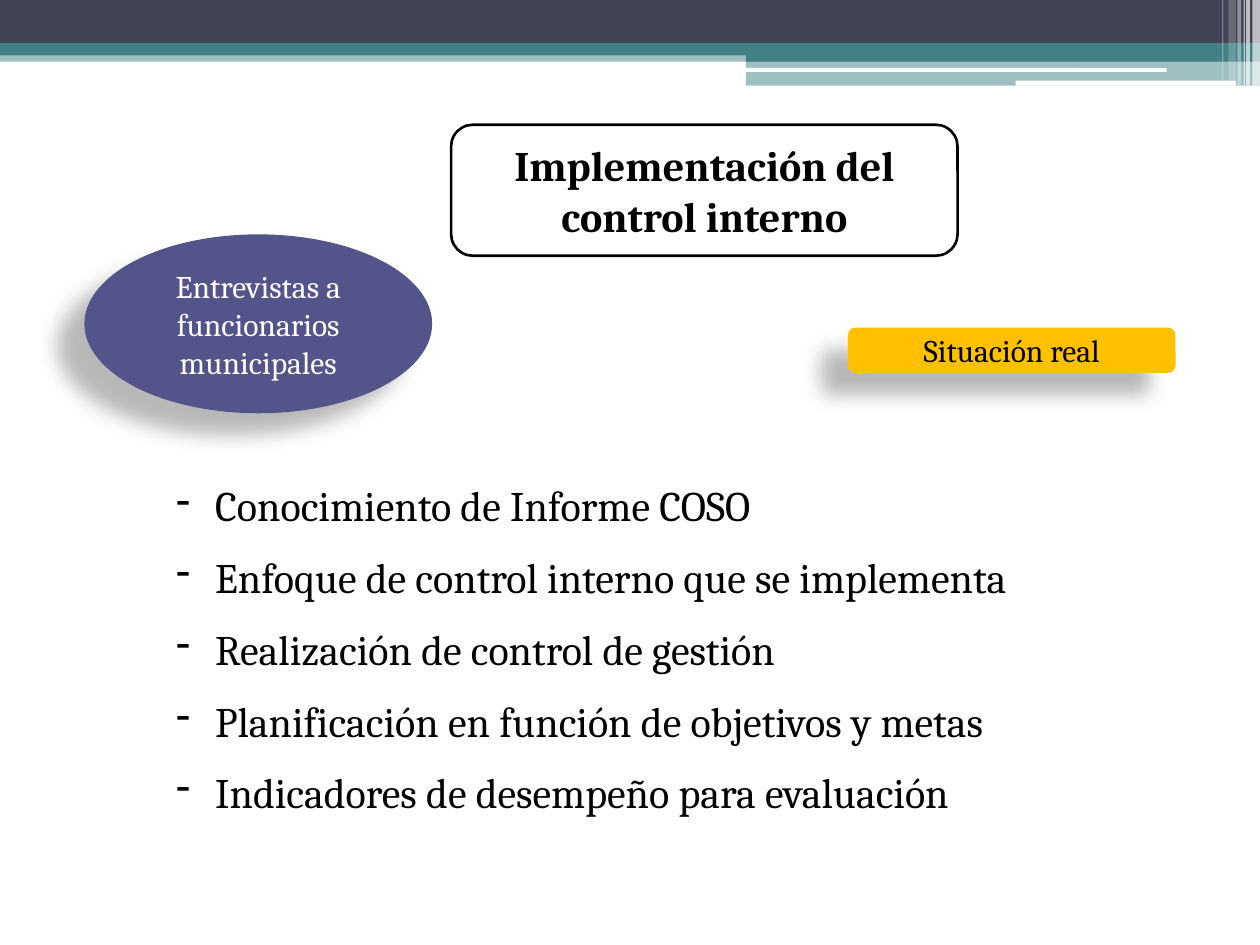
from dataclasses import dataclass
from typing import Optional

from lxml.etree import SubElement
from pptx import Presentation
from pptx.dml.color import RGBColor
from pptx.enum.shapes import MSO_SHAPE as Preset
from pptx.enum.text import MSO_ANCHOR as Anchor, PP_ALIGN as Align
from pptx.oxml.ns import qn
from pptx.util import Inches, Pt

FONT = "Cambria"
COLORS = {
    "navy": "424456",
    "teal": "438086",
    "white": "FFFFFF",
    "black": "000000",
    "purple": "53548A",
    "amber": "FFC000",
}


@dataclass
class Band:
    left: float
    top: float
    width: float
    height: float
    color: str
    opacity: int = 100
    preset: Preset = Preset.RECTANGLE


@dataclass
class Label:
    text: str
    preset: Preset
    left: float
    top: float
    width: float
    height: float
    fill: str
    color: str
    size: int
    bold: bool = False
    outline: Optional[str] = None
    shadow: bool = False


BANDS = [
    Band(0, 0.4, 10, 0.09, "teal", 50),
    Band(0, 0, 10, 0.34, "navy"),
    Band(0, 0.34, 10, 0.1, "teal"),
    Band(5.92, 0.39, 4.08, 0.1, "teal"),
    Band(5.92, 0.48, 4.08, 0.2, "teal", 50),
    Band(5.91, 0.54, 3.35, 0.03, "white", preset=Preset.ROUNDED_RECTANGLE),
    Band(8.06, 0.64, 1.75, 0.04, "white", preset=Preset.ROUNDED_RECTANGLE),
    Band(9.94, 0, 0.06, 0.68, "white", 65),
    Band(9.89, 0, 0.03, 0.68, "white", 65),
    Band(9.87, 0, 0.01, 0.68, "white", 60),
    Band(9.82, 0, 0.03, 0.68, "white", 40),
    Band(9.75, 0, 0.06, 0.64, "white", 20),
    Band(9.7, 0, 0.01, 0.64, "white", 30),
]

LABELS = [
    Label("Implementación del control interno", Preset.ROUNDED_RECTANGLE,
          3.58, 0.99, 4.02, 1.04, "white", "black", 24, bold=True, outline="black"),
    Label("Entrevistas a funcionarios municipales", Preset.OVAL,
          0.67, 1.86, 2.76, 1.42, "purple", "white", 18, shadow=True),
    Label("Situación real", Preset.ROUNDED_RECTANGLE,
          6.73, 2.6, 2.6, 0.36, "amber", "black", 18, shadow=True),
]

TOPICS = [
    "Conocimiento de Informe COSO",
    "Enfoque de control interno que se implementa",
    "Realización de control de gestión",
    "Planificación en función de objetivos y metas",
    "Indicadores de desempeño para evaluación",
]


def rgb(name: str) -> RGBColor:
    return RGBColor.from_string(COLORS[name])


def set_opacity(color_element, percent: int) -> None:
    SubElement(color_element, qn("a:alpha"), val=str(percent * 1000))


def add_filled_shape(slide, item, fill: str):
    shape = slide.shapes.add_shape(
        item.preset, Inches(item.left), Inches(item.top),
        Inches(item.width), Inches(item.height))
    shape.fill.solid()
    shape.fill.fore_color.rgb = rgb(fill)
    shape.line.fill.background()
    shape.shadow.inherit = False
    return shape


def add_band(slide, band: Band) -> None:
    shape = add_filled_shape(slide, band, band.color)
    if band.opacity < 100:
        set_opacity(shape.element.spPr.find(qn("a:solidFill"))[0], band.opacity)


def add_shadow(shape) -> None:
    effects = shape.element.spPr.find(qn("a:effectLst"))
    shadow = SubElement(
        effects, qn("a:outerShdw"), blurRad=str(Pt(11.8)), dist=str(Pt(19.7)),
        dir=str(141 * 60000), algn="ctr", rotWithShape="0")
    set_opacity(SubElement(shadow, qn("a:srgbClr"), val=COLORS["black"]), 28)


def style_font(paragraph, size: int, color: str, bold: bool = False) -> None:
    font = paragraph.font
    font.name = FONT
    font.size = Pt(size)
    font.bold = bold
    font.color.rgb = rgb(color)


def add_label(slide, label: Label) -> None:
    shape = add_filled_shape(slide, label, label.fill)
    if label.outline:
        shape.line.color.rgb = rgb(label.outline)
        shape.line.width = Pt(1.5)
    if label.shadow:
        add_shadow(shape)
    frame = shape.text_frame
    frame.word_wrap = True
    frame.vertical_anchor = Anchor.MIDDLE
    paragraph = frame.paragraphs[0]
    paragraph.text = label.text
    paragraph.alignment = Align.CENTER
    style_font(paragraph, label.size, label.color, label.bold)


def add_topics(slide, topics: list[str]) -> None:
    box = slide.shapes.add_textbox(Inches(1.3), Inches(3.59), Inches(7.4), Inches(2.91))
    frame = box.text_frame
    frame.word_wrap = True
    frame.text = "\n".join(topics)
    for paragraph in frame.paragraphs:
        paragraph.line_spacing = Pt(41)
        style_font(paragraph, 24, "black")
        properties = paragraph._p.get_or_add_pPr()
        properties.set("marL", str(Inches(0.31)))
        properties.set("indent", str(Inches(-0.31)))
        bullet = properties.makeelement(qn("a:buChar"), {"char": "-"})
        properties.find(qn("a:defRPr")).addprevious(bullet)


def main() -> None:
    presentation = Presentation()
    presentation.slide_width = Inches(10)
    presentation.slide_height = Inches(7.5)
    slide = presentation.slides.add_slide(presentation.slide_layouts[6])
    for band in BANDS:
        add_band(slide, band)
    for label in LABELS:
        add_label(slide, label)
    add_topics(slide, TOPICS)
    presentation.save("out.pptx")


if __name__ == "__main__":
    main()
